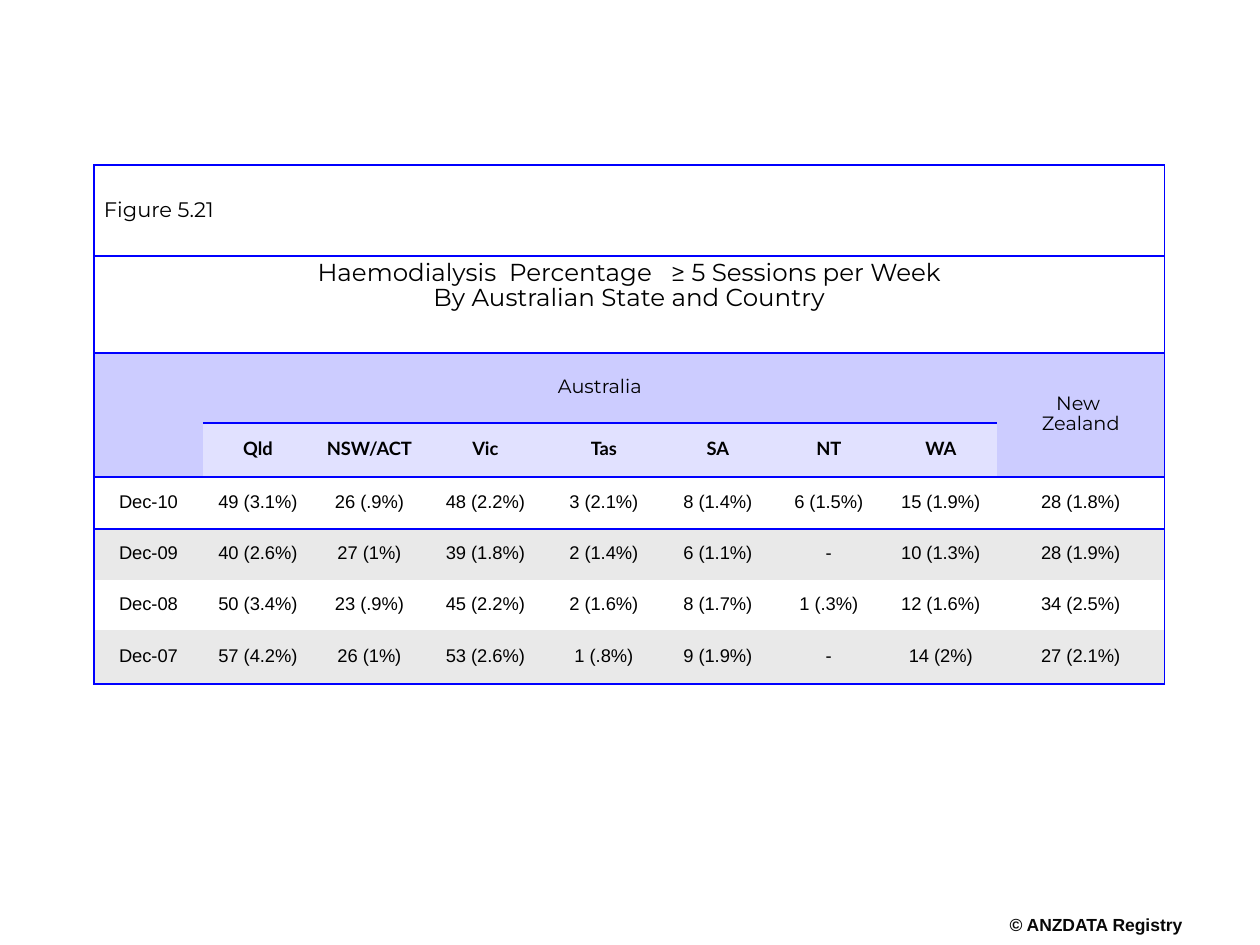
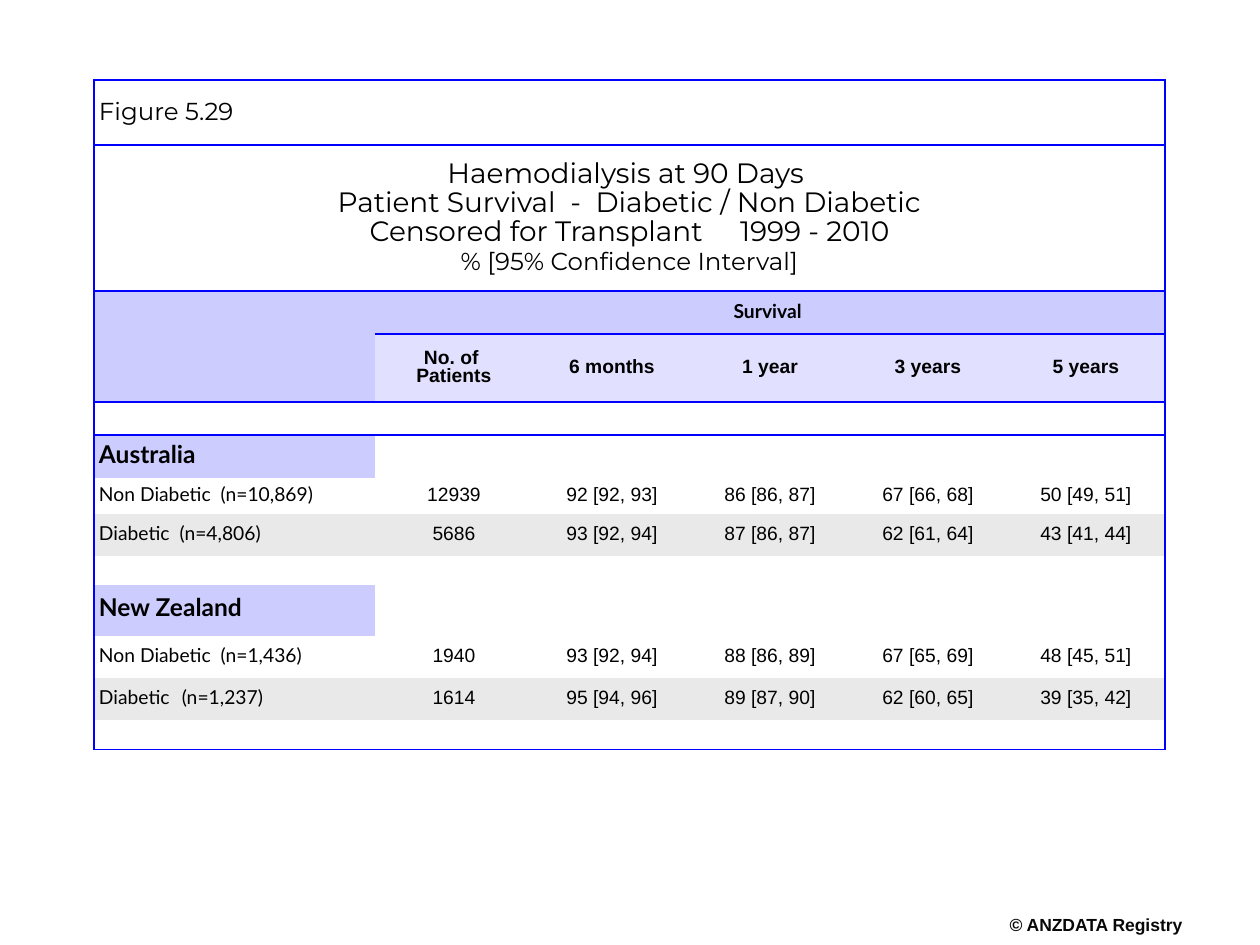
from lxml import etree
from pptx import Presentation
from pptx import util as u
from pptx.dml.color import RGBColor
from pptx.enum import text
from pptx.oxml.ns import qn

PX = u.Inches(1) / 126
BLACK = RGBColor(0x00, 0x00, 0x00)
INK = RGBColor(0x08, 0x08, 0x08)
BLUE = RGBColor(0x00, 0x00, 0xFF)
LILAC = RGBColor(0xCC, 0xCC, 0xFF)
PALE = RGBColor(0xE1, 0xE1, 0xFF)
GREY = RGBColor(0xE9, 0xE9, 0xE9)
NO_STYLE = "{2D5ABB26-0587-4C30-8999-92F81FD0307C}"
LEFT, CENTER = text.PP_ALIGN.LEFT, text.PP_ALIGN.CENTER


def px(n):
    return u.Emu(round(n * PX))


def font(name, size, bold=False):
    return dict(name=name, size=u.Pt(size), bold=bold)


class Deck:
    """Builds slides holding one ruled registry table and a footer."""

    def __init__(self):
        self.prs = Presentation()
        self.prs.slide_width, self.prs.slide_height = px(1260), px(945)

    def slide(self):
        self.s = self.prs.slides.add_slide(self.prs.slide_layouts[6])
        self.footer()

    def footer(self):
        sp = self.s.shapes.add_textbox(px(1007), px(917), px(178), px(21))
        tf = sp.text_frame
        tf.word_wrap = False
        for side in ("left", "right", "top", "bottom"):
            setattr(tf, f"margin_{side}", 0)
        self.add_lines(tf, ["© ANZDATA Registry"], font("Arial", 10, True), color=INK)

    def add_lines(self, tf, lines, fmt, align=CENTER, color=BLACK, spacing=0.85):
        """Adds lines; a (before, gap, after) line widens one space by gap points."""
        for i, line in enumerate(lines):
            p = tf.paragraphs[0] if i == 0 else tf.add_paragraph()
            p.alignment, p.line_spacing = align, spacing
            before, gap, after = (line, 0, "") if isinstance(line, str) else line
            for part in (before, " ", after) if gap else (before,):
                if part:
                    self.add_words(p, part, fmt, color, gap if part == " " else 0)

    def add_words(self, p, words, fmt, color, gap=0):
        r = p.add_run()
        r.text = words
        for key, value in fmt.items():
            setattr(r.font, key, value)
        r.font.color.rgb = color
        if gap:
            r.font._element.set("spc", str(gap * 100))

    def table(self, top, cols, rows, ruled):
        sp = self.s.shapes.add_table(len(rows), len(cols), px(94), px(top),
                                     px(sum(cols)), px(sum(rows)))
        self.tbl, self.ruled = sp.table, ruled
        self.tbl.first_row = self.tbl.horz_banding = False
        self.tbl._tbl.tblPr.find(qn("a:tableStyleId")).text = NO_STYLE
        for col, w in zip(self.tbl.columns, cols):
            col.width = px(w)
        for row, h in zip(self.tbl.rows, rows):
            row.height = px(h)

    def cell(self, row, col, lines=(), fmt=None, fill=None, span=(1, 1), pad=(5, 5), **style):
        end_row, end_col = row + span[0] - 1, col + span[1] - 1
        origin = self.tbl.cell(row, col)
        if span != (1, 1):
            origin.merge(self.tbl.cell(end_row, end_col))
        for i in range(row, end_row + 1):
            for j in range(col, end_col + 1):
                first = (i, j) == (row, col)
                c = self.tbl.cell(i, j)
                c.margin_left = c.margin_right = px(pad[0])
                c.margin_top = c.margin_bottom = px(pad[1])
                c.vertical_anchor = text.MSO_ANCHOR.MIDDLE
                self.borders(c, {
                    "L": col == 0 and j == col,
                    "R": end_col == len(self.tbl.columns) - 1 and (first or j == end_col),
                    "T": row in self.ruled and i == row,
                    "B": end_row + 1 in self.ruled and (first or i == end_row),
                })
                if fill is None:
                    c.fill.background()
                else:
                    c.fill.solid()
                    c.fill.fore_color.rgb = fill
                if not (first and lines):
                    etree.SubElement(c.text_frame.paragraphs[0]._p, qn("a:endParaRPr"), sz="800")
        if lines:
            self.add_lines(origin.text_frame, lines, fmt, **style)
        return origin

    def borders(self, c, edges):
        tcPr = c._tc.get_or_add_tcPr()
        for edge in (e for e, shown in edges.items() if shown):
            ln = etree.SubElement(tcPr, qn(f"a:ln{edge}"), w=str(int(u.Pt(1))))
            fill = etree.SubElement(ln, qn("a:solidFill"))
            etree.SubElement(fill, qn("a:srgbClr"), val=str(BLUE))


def sessions_slide(deck):
    states = ["Qld", "NSW/ACT", "Vic", "Tas", "SA", "NT", "WA"]
    sessions = [
        ["Dec-10", "49 (3.1%)", "26 (.9%)", "48 (2.2%)", "3 (2.1%)", "8 (1.4%)",
         "6 (1.5%)", "15 (1.9%)", "28 (1.8%)"],
        ["Dec-09", "40 (2.6%)", "27 (1%)", "39 (1.8%)", "2 (1.4%)", "6 (1.1%)",
         "-", "10 (1.3%)", "28 (1.9%)"],
        ["Dec-08", "50 (3.4%)", "23 (.9%)", "45 (2.2%)", "2 (1.6%)", "8 (1.7%)",
         "1 (.3%)", "12 (1.6%)", "34 (2.5%)"],
        ["Dec-07", "57 (4.2%)", "26 (1%)", "53 (2.6%)", "1 (.8%)", "9 (1.9%)",
         "-", "14 (2%)", "27 (2.1%)"],
    ]
    group = font("Montserrat", 11)
    deck.slide()
    deck.table(165, [109, 110, 113, 119, 118, 110, 112, 112, 168],
               [91, 97, 70, 54, 52, 51, 50, 54], ruled={0, 1, 2, 3, 4, 8})
    deck.cell(0, 0, ["Figure 5.21"], font("Montserrat", 12), span=(1, 9), pad=(10, 0), align=LEFT)
    title = deck.cell(1, 0, [("Haemodialysis  Percentage", 7, "≥ 5 Sessions per Week"),
                             "By Australian State and Country"],
                      font("Montserrat", 14), span=(1, 9))
    title.vertical_anchor = text.MSO_ANCHOR.TOP
    deck.cell(2, 0, fill=LILAC, span=(2, 1))
    deck.cell(2, 1, ["Australia"], group, LILAC, (1, 7))
    deck.cell(2, 8, ["New ", "Zealand"], group, LILAC, (2, 1))
    for col, state in enumerate(states, 1):
        deck.cell(3, col, [state], font("Lato", 10.5, True), PALE)
    for i, values in enumerate(sessions):
        for col, value in enumerate(values):
            deck.cell(4 + i, col, [value], font("Arial", 10.5), GREY if i % 2 else None)


def survival_slide(deck):
    periods = [["No. of ", "Patients"], ["6 months"], ["1 year"], ["3 years"], ["5 years"]]
    countries = [
        ("Australia", [
            ["Non Diabetic  (n=10,869)", "12939", "92 [92, 93]", "86 [86, 87]",
             "67 [66, 68]", "50 [49, 51]"],
            ["Diabetic  (n=4,806)", "5686", "93 [92, 94]", "87 [86, 87]",
             "62 [61, 64]", "43 [41, 44]"]]),
        ("New Zealand", [
            ["Non Diabetic  (n=1,436)", "1940", "93 [92, 94]", "88 [86, 89]",
             "67 [65, 69]", "48 [45, 51]"],
            [("Diabetic", 4, "(n=1,237)"), "1614", "95 [94, 96]", "89 [87, 90]",
             "62 [60, 65]", "39 [35, 42]"]]),
    ]
    tight = dict(pad=(5, 2))
    deck.slide()
    deck.table(80, [281] + [158] * 5,
               [65, 146, 43, 68, 33, 43, 36, 42, 29, 51, 42, 42, 30], ruled={0, 1, 2, 3, 4, 13})
    deck.cell(0, 0, ["Figure 5.29"], font("Montserrat", 14), span=(1, 6), align=LEFT)
    title = deck.cell(1, 0, [("Haemodialysis at 90 Days", 8, ""),
                             "Patient Survival  -  Diabetic / Non Diabetic",
                             ("Censored for Transplant", 17, "1999 - 2010"),
                             "% [95% Confidence Interval]"],
                      font("Montserrat", 16), span=(1, 6))
    interval = title.text_frame.paragraphs[-1]
    interval.space_before = u.Pt(2)
    interval.runs[0].font.size = u.Pt(14)
    deck.cell(2, 0, fill=LILAC, span=(2, 1))
    deck.cell(2, 1, ["Survival "], font("Lato", 11, True), LILAC, (1, 5), **tight)
    for col, period in enumerate(periods, 1):
        deck.cell(3, col, period, font("Arial", 11, True), PALE, **tight)
    for top, (country, groups) in zip((4, 8), countries):
        for col in range(6):
            deck.cell(top, col, **tight)
            if col:
                deck.cell(top + 1, col, **tight)
        deck.cell(top + 1, 0, [country], font("Lato", 14, True), LILAC,
                  align=LEFT, spacing=0.75, **tight)
        for i, values in enumerate(groups):
            for col, value in enumerate(values):
                deck.cell(top + 2 + i, col, [value], font("Arial" if col else "Lato", 11),
                          GREY if i else None, align=CENTER if col else LEFT, **tight)
    for col in range(6):
        deck.cell(12, col, **tight)


def main():
    deck = Deck()
    sessions_slide(deck)
    survival_slide(deck)
    deck.prs.save("out.pptx")


if __name__ == "__main__":
    main()
